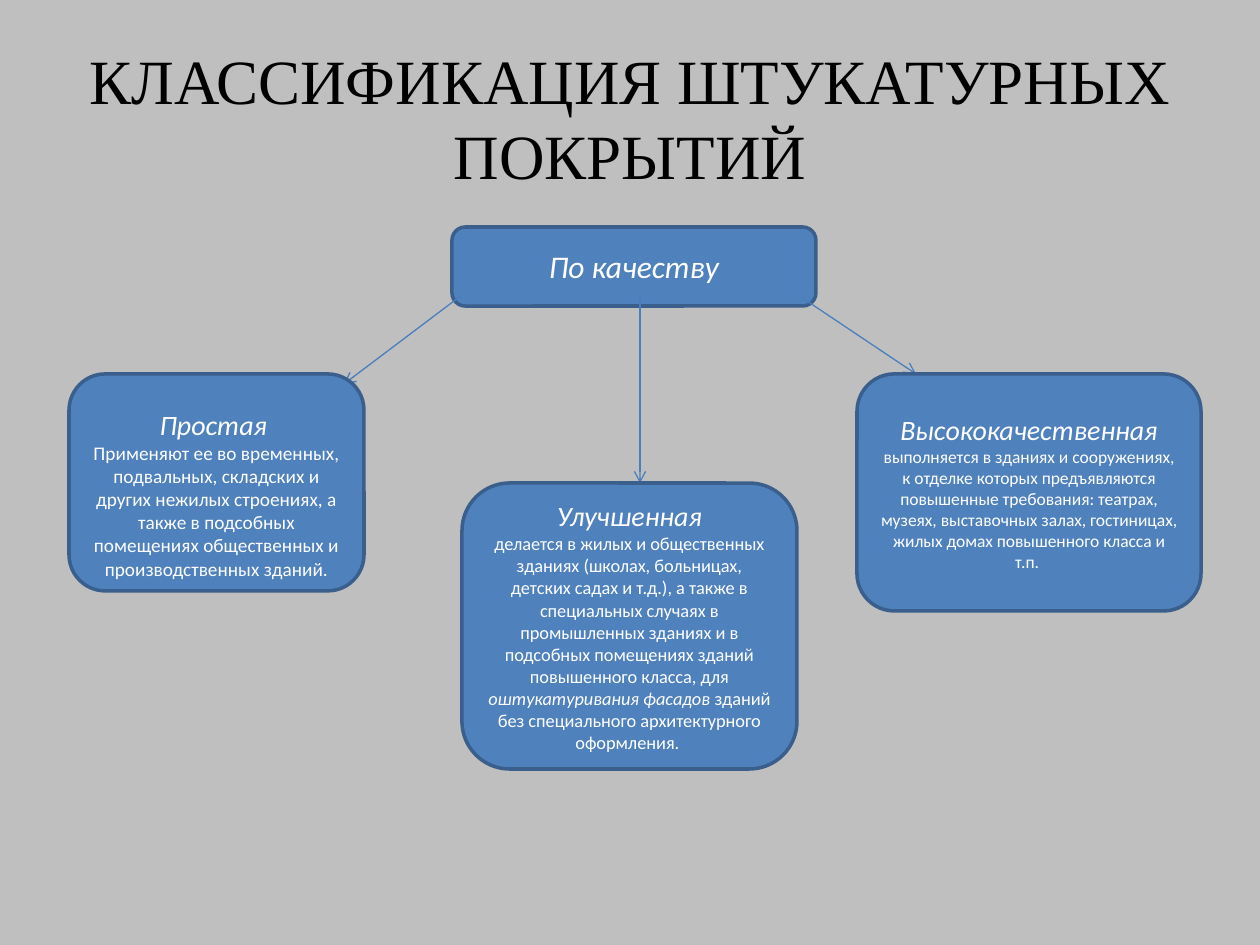
from dataclasses import dataclass

from lxml.etree import SubElement
from pptx import Presentation
from pptx.dml.color import RGBColor
from pptx.enum.shapes import MSO_CONNECTOR, MSO_SHAPE
from pptx.enum.text import MSO_ANCHOR, PP_ALIGN
from pptx.oxml.ns import qn
from pptx.slide import Slide
from pptx.text.text import TextFrame
from pptx.util import Emu, Pt

PX_PER_INCH = 126
COLORS = {
    "background": "BFBFBF",
    "box": "4F81BD",
    "border": "3A5F8C",
    "arrow": "4B7EBC",
    "title": "000000",
    "label": "FFFFFF",
}


@dataclass(frozen=True)
class Span:
    text: str
    size: float
    italic: bool = False
    font: str = "Calibri"
    color: str = "label"


@dataclass(frozen=True)
class Box:
    left: int
    top: int
    width: int
    height: int
    paragraphs: tuple[tuple[Span, ...], ...]
    rounding: float = 0.167
    margin_top: int = 6


@dataclass(frozen=True)
class Arrow:
    start: tuple[int, int]
    end: tuple[int, int]


TITLE = Box(63, 38, 1134, 158, (
    (Span("КЛАССИФИКАЦИЯ ШТУКАТУРНЫХ ПОКРЫТИЙ", 36, font="Times New Roman", color="title"),),
))
QUALITY = Box(452, 227, 364, 79, ((Span("По качеству", 18, True),),))
SIMPLE = Box(69, 374, 295, 217, (
    (Span("Простая ", 16, True),),
    (Span("Применяют ее во временных, подвальных, складских и других нежилых строениях, "
          "а также в подсобных помещениях общественных и производственных зданий.", 11),),
), margin_top=29)
HIGH_GRADE = Box(857, 374, 344, 237, (
    (Span("Высококачественная ", 16, True),
     Span("выполняется в зданиях и сооружениях, к отделке которых предъявляются "
          "повышенные требования: театрах, музеях, выставочных залах, гостиницах, "
          "жилых домах повышенного класса и т.п. ", 10)),
), rounding=0.158)
IMPROVED = Box(462, 483, 335, 286, (
    (Span("Улучшенная", 16, True),),
    (Span("делается в жилых и общественных зданиях (школах, больницах, детских садах и т.д.), "
          "а также в специальных случаях в промышленных зданиях и в подсобных помещениях "
          "зданий повышенного класса, для ", 10.5),
     Span("оштукатуривания фасадов", 10.5, True),
     Span(" зданий без специального архитектурного оформления. ", 10.5)),
))
DIAGRAM = (
    QUALITY,
    Arrow((462, 295), (344, 384)), SIMPLE,
    Arrow((798, 295), (916, 374)), HIGH_GRADE,
    Arrow((640, 295), (640, 483)), IMPROVED,
)


def px(length: int) -> Emu:
    """Convert pixels to EMU."""
    return Emu(round(length * 914400 / PX_PER_INCH))


def rgb(role: str) -> RGBColor:
    """Look up the colour of a role."""
    return RGBColor.from_string(COLORS[role])


def write_text(frame: TextFrame, box: Box) -> None:
    """Fill a frame with centred paragraphs, run by run."""
    frame.word_wrap = True
    frame.vertical_anchor = MSO_ANCHOR.MIDDLE
    frame.margin_top = px(box.margin_top)
    for index, spans in enumerate(box.paragraphs):
        paragraph = frame.add_paragraph() if index else frame.paragraphs[0]
        paragraph.alignment = PP_ALIGN.CENTER
        for span in spans:
            run = paragraph.add_run()
            run.text = span.text
            run.font.name = span.font
            run.font.size = Pt(span.size)
            run.font.italic = span.italic
            run.font.color.rgb = rgb(span.color)


def draw_title(slide: Slide, box: Box) -> None:
    """Draw the slide title."""
    title = slide.shapes.add_textbox(px(box.left), px(box.top), px(box.width), px(box.height))
    write_text(title.text_frame, box)


def draw_box(slide: Slide, box: Box) -> None:
    """Draw a rounded box with its text."""
    category = slide.shapes.add_shape(
        MSO_SHAPE.ROUNDED_RECTANGLE, px(box.left), px(box.top), px(box.width), px(box.height))
    category.adjustments[0] = box.rounding
    category.shadow.inherit = False
    category.fill.solid()
    category.fill.fore_color.rgb = rgb("box")
    category.line.color.rgb = rgb("border")
    category.line.width = Pt(2)
    write_text(category.text_frame, box)


def draw_arrow(slide: Slide, arrow: Arrow) -> None:
    """Draw a straight line with an open arrowhead at its end."""
    branch = slide.shapes.add_connector(
        MSO_CONNECTOR.STRAIGHT, *map(px, arrow.start), *map(px, arrow.end))
    branch.line.color.rgb = rgb("arrow")
    branch.line.width = Pt(0.75)
    properties = branch.element.spPr
    SubElement(properties.find(qn("a:ln")), qn("a:tailEnd"), type="arrow")
    SubElement(properties, qn("a:effectLst"))


def main() -> None:
    """Build the slide and save it."""
    deck = Presentation()
    deck.slide_width, deck.slide_height = px(1260), px(945)
    slide = deck.slides.add_slide(deck.slide_layouts[6])
    slide.background.fill.solid()
    slide.background.fill.fore_color.rgb = rgb("background")
    draw_title(slide, TITLE)
    for element in DIAGRAM:
        if isinstance(element, Arrow):
            draw_arrow(slide, element)
        else:
            draw_box(slide, element)
    deck.save("out.pptx")


if __name__ == "__main__":
    main()
